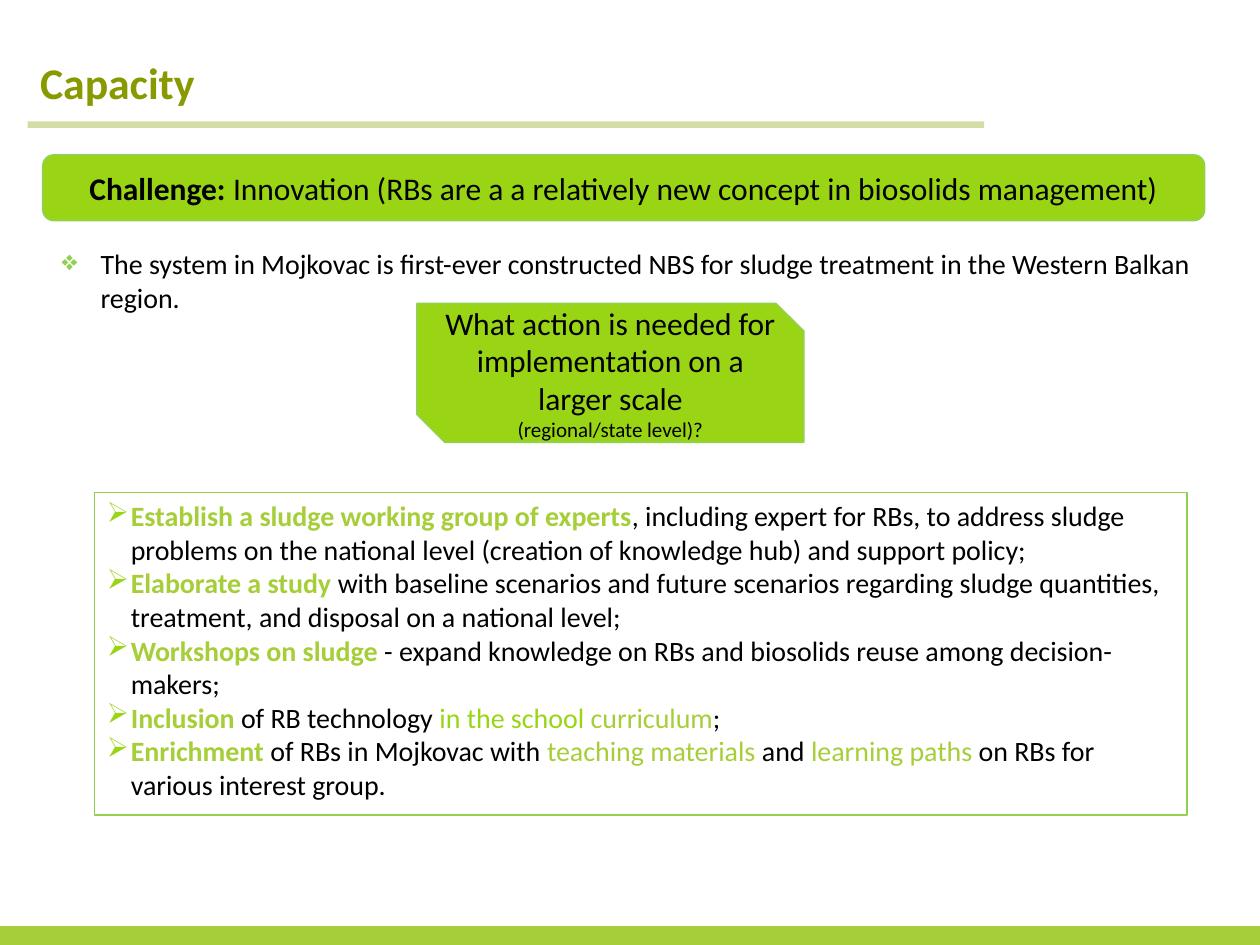
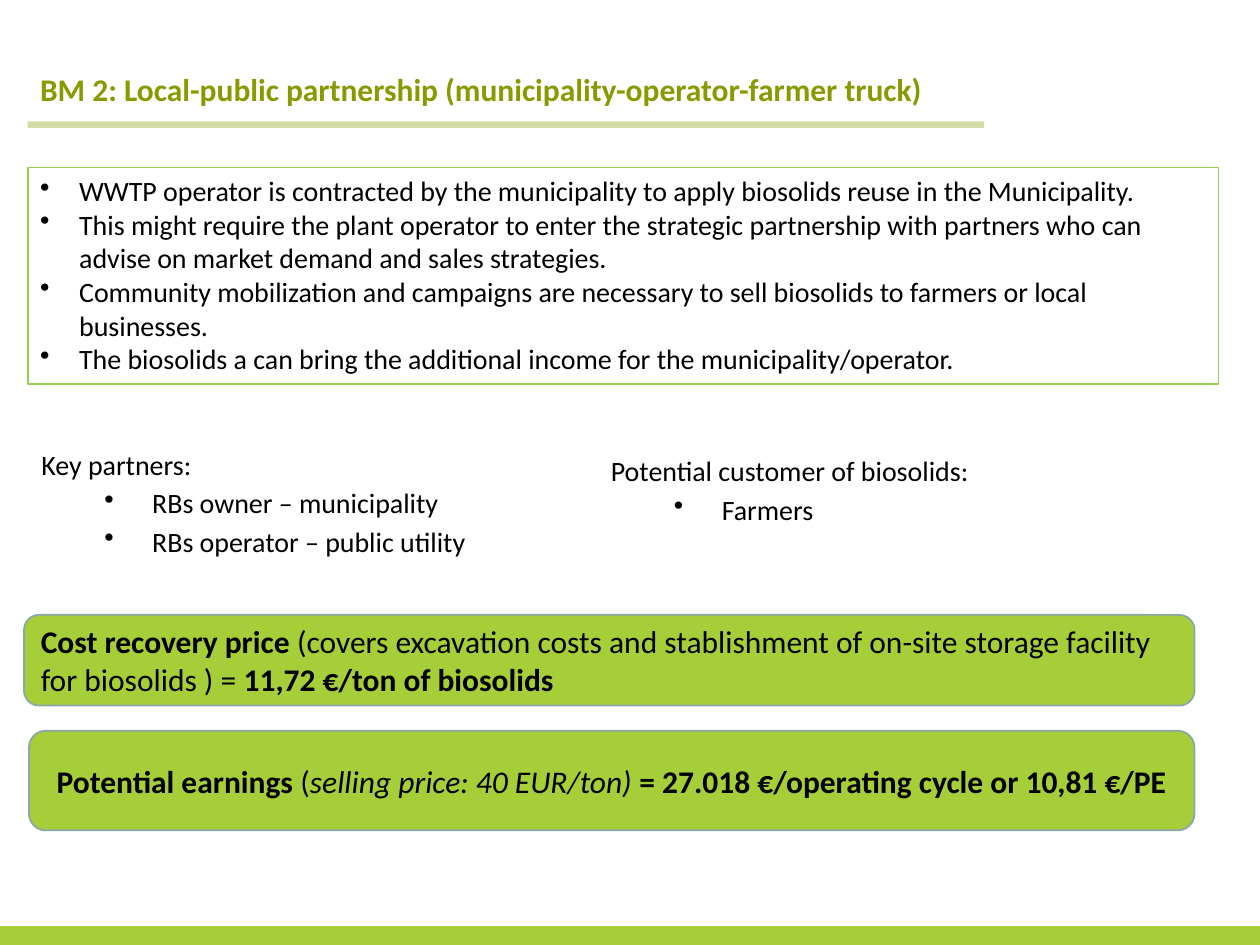
"""Build two slides on capacity and a business model for biosolids reuse."""
import pptx
import pptx.util
import pptx.dml.color
import pptx.enum.shapes
import pptx.enum.text
import lxml.etree

Inches, Pt = pptx.util.Inches, pptx.util.Pt
RGB = pptx.dml.color.RGBColor
Kind = pptx.enum.shapes.MSO_SHAPE
Align = pptx.enum.text.PP_ALIGN
Mid = pptx.enum.text.MSO_ANCHOR.MIDDLE
Top = pptx.enum.text.MSO_ANCHOR.TOP
NS = "{http://schemas.openxmlformats.org/drawingml/2006/main}"

BLACK = RGB(0x00, 0x00, 0x00)
WHITE = RGB(0xFF, 0xFF, 0xFF)
OLIVE = RGB(0x88, 0x9A, 0x00)
GREEN = RGB(0xA6, 0xCE, 0x39)
LIME = RGB(0x9A, 0xD5, 0x15)
EDGE = RGB(0x92, 0xD0, 0x50)
GREY = RGB(0x8A, 0xA6, 0xA8)


def shape(slide, kind, at, fill=None, edge=None, anchor=Top):
    """Add a filled shape, or a plain text box if kind is None."""
    spot = [Inches(n) for n in at]
    if kind is None:
        item = slide.shapes.add_textbox(*spot)
    else:
        item = slide.shapes.add_shape(kind, *spot)
        item.shadow.inherit = False
        item.fill.solid()
        item.fill.fore_color.rgb = fill
        if edge is None:
            item.line.fill.background()
        else:
            item.line.color.rgb = edge
            item.line.width = Pt(1)
    item.text_frame.word_wrap = True
    item.text_frame.vertical_anchor = anchor
    return item


def write(item, text, size, align=Align.LEFT, mark=None, tint=None,
          left=0, hang=0, color=BLACK, bold=None, first=True):
    """Add one paragraph; text is a string or a list of (words, style, colour)."""
    frame = item.text_frame
    para = frame.paragraphs[0] if first else frame.add_paragraph()
    para.alignment = align
    if mark:
        props = para._p.get_or_add_pPr()
        props.set("marL", str(Inches(left)))
        props.set("indent", str(-Inches(hang)))
        if tint is not None:
            tone = lxml.etree.SubElement(props, NS + "buClr")
            lxml.etree.SubElement(tone, NS + "srgbClr", val=str(tint))
        lxml.etree.SubElement(props, NS + "buChar", char=mark)
    para.font.name = "Calibri"
    para.font.size = Pt(size)
    para.font.color.rgb = color
    para.font.bold = bold
    for words, style, hue in [(text, "", None)] if isinstance(text, str) else text:
        run = para.add_run()
        run.text = words
        if "b" in style:
            run.font.bold = True
        if "i" in style:
            run.font.italic = True
        if hue is not None:
            run.font.color.rgb = hue
    return para


deck = pptx.Presentation()
deck.slide_width, deck.slide_height = Inches(10), Inches(7.5)

heads = [
    ("Capacity", 25, 0.33),
    ("BM 2: Local-public partnership (municipality-operator-farmer truck)", 18, 0.3),
]
for words, size, high in heads:
    slide = deck.slides.add_slide(deck.slide_layouts[6])
    shape(slide, Kind.RECTANGLE, (0, 7.35, 10, 0.15), GREEN)
    title = shape(slide, None, (0.22, 0.63, 8.09, high))
    write(title, words, size, color=OLIVE, bold=True).line_spacing = Pt(13)
    rule = slide.shapes.add_connector(
        pptx.enum.shapes.MSO_CONNECTOR.STRAIGHT,
        Inches(0.22), Inches(0.99), Inches(7.81), Inches(0.99))
    rule.line.color.rgb = OLIVE
    rule.line.width = Pt(3.75)
    tone = next(rule._element.spPr.iter(NS + "srgbClr"))
    lxml.etree.SubElement(tone, NS + "alpha", val="35000")
    lxml.etree.SubElement(rule._element.spPr, NS + "effectLst")

skill, model = deck.slides

banner = shape(skill, Kind.ROUNDED_RECTANGLE, (0.34, 1.23, 9.22, 0.52), LIME, EDGE, Mid)
write(banner, [
    ("Challenge: ", "b", None),
    ("Innovation (RBs are a a relatively new concept in biosolids management)", "", None),
], 18, Align.CENTER)

note = shape(skill, None, (0.39, 1.91, 9.41, 0.94))
write(note, "The system in Mojkovac is first-ever constructed NBS for sludge treatment "
      "in the Western Balkan region.", 16, mark="❖", tint=EDGE, left=0.31, hang=0.31)

steps = [
    [("Establish a sludge working group of experts", "b", GREEN),
     (", including expert for RBs, to address sludge problems on the national level "
      "(creation of knowledge hub) and support policy;", "", None)],
    [("Elaborate a study ", "b", GREEN),
     ("with baseline scenarios and future scenarios regarding sludge quantities, "
      "treatment, and disposal on a national level;", "", None)],
    [("Workshops on sludge ", "b", GREEN),
     ("- expand knowledge on RBs and biosolids reuse among decision-makers;", "", None)],
    [("Inclusion ", "b", GREEN), ("of RB technology ", "", None),
     ("in the school ", "", LIME), ("curriculum", "", GREEN), (";", "", None)],
    [("Enrichment ", "b", GREEN), ("of RBs in Mojkovac with ", "", None),
     ("teaching materials ", "", GREEN), ("and ", "", None),
     ("learning paths ", "", GREEN), ("on RBs for various interest group.", "", None)],
]
plan = shape(skill, Kind.RECTANGLE, (0.75, 3.91, 8.67, 2.56), WHITE, EDGE)
for i, step in enumerate(steps):
    write(plan, step, 16, mark="➢", tint=LIME, left=0.19, hang=0.19, first=i == 0)

ask = shape(skill, Kind.SNIP_2_DIAG_RECTANGLE, (3.31, 2.41, 3.07, 1.1), LIME, EDGE, Mid)
ask.adjustments[0], ask.adjustments[1] = 0, 0.2
write(ask, "What action is needed for implementation on a larger scale", 18, Align.CENTER)
write(ask, "(regional/state level)?", 12, Align.CENTER, first=False)

points = [
    "WWTP operator is contracted by the municipality to apply biosolids reuse "
    "in the Municipality.",
    "This might require the plant operator to enter the strategic partnership with "
    "partners who can advise on market demand and sales strategies.",
    "Community mobilization and campaigns are necessary to sell biosolids to farmers "
    "or local businesses.",
    "The biosolids a can bring the additional income for the municipality/operator.",
]
terms = shape(model, Kind.RECTANGLE, (0.22, 1.33, 9.45, 1.72), WHITE, EDGE)
for i, point in enumerate(points):
    write(terms, point, 16, mark="•", left=0.31, hang=0.31, first=i == 0)

groups = [
    ((0.23, 3.46, 3.62, 1.03), "Key partners:",
     ["RBs owner – municipality", "RBs operator – public utility"]),
    ((4.75, 3.51, 4.45, 0.72), "Potential customer of biosolids:", ["Farmers"]),
]
for at, head, names in groups:
    group = shape(model, None, at)
    write(group, head, 16, Align.JUSTIFY).line_spacing = 1.15
    for name in names:
        para = write(group, name, 16, Align.JUSTIFY, "•", left=0.88, hang=0.38, first=False)
        para.level = 1
        para.line_spacing = 1.15

sums = [
    ((0.19, 4.88, 9.29, 0.72), Align.LEFT, [
        ("Cost recovery price ", "b", None),
        ("(covers excavation costs and stablishment of on-site storage facility "
         "for biosolids ) = ", "", None),
        ("11,72 €/ton of biosolids", "b", None)]),
    ((0.23, 5.8, 9.25, 0.79), Align.CENTER, [
        ("Potential earnings ", "b", None), ("(", "", None),
        ("selling price: 40 EUR/ton) ", "i", None),
        ("= 27.018 €/operating cycle or 10,81 €/PE", "b", None)]),
]
for at, align, text in sums:
    write(shape(model, Kind.ROUNDED_RECTANGLE, at, GREEN, GREY, Mid), text, 18, align)

deck.save("out.pptx")
